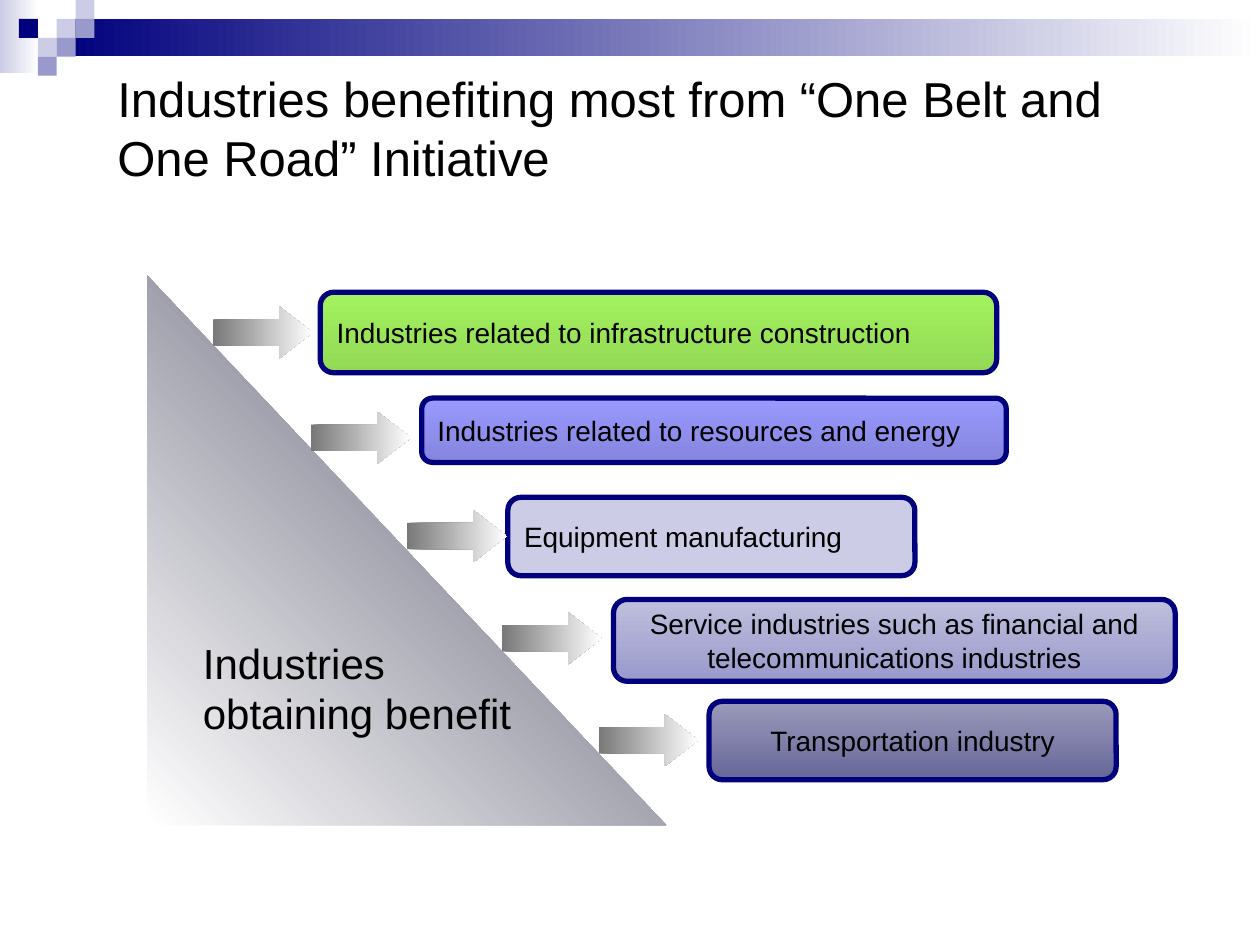
from pptx import Presentation
from pptx.dml.color import RGBColor
from pptx.enum import shapes, text
from pptx.util import Pt

COLORS = {
    "black": "000000", "white": "FFFFFF", "navy": "00007D",
    "pale": "CCCCE6", "lilac": "9999CC", "dusk": "46465F", "gray": "787878",
    "green": "A3F25F", "green_end": "92D955",
    "violet": "9999FF", "violet_end": "8585DE",
    "lavender": "BFBFDD", "slate": "9A9ABB", "slate_end": "666699",
}
SQUARE = 10.8
# column, row, colour
SQUARES = [(3, 1, "pale"), (4, 0, "pale"), (4, 1, "lilac"), (2, 2, "pale"),
           (1, 1, "navy"), (3, 2, "lilac"), (2, 3, "lilac")]

LEFT, CENTER = text.PP_ALIGN.LEFT, text.PP_ALIGN.CENTER
# lines, box, fill colours, alignment, arrow position
INDUSTRIES = [
    (["Industries related to infrastructure construction"],
     (183, 167, 386.5, 46), ("green", "green_end"), LEFT, (121.7, 175)),
    (["Industries related to resources and energy"],
     (241, 227.5, 334, 36.7), ("violet", "violet_end"), LEFT, (177.8, 235.2)),
    (["Equipment manufacturing"],
     (290.2, 284.2, 232.6, 44.8), ("pale",), LEFT, (232.6, 291.4)),
    (["Service industries such as financial and",
      "telecommunications industries"],
     (350.6, 342.5, 321, 46.8), ("lavender", "lilac"), CENTER, (286.8, 349.8)),
    (["Transportation industry"],
     (405.2, 400.8, 232.6, 44.8), ("slate", "slate_end"), CENTER, (342, 408)),
]


def rgb(name):
    return RGBColor.from_string(COLORS[name])


def add_filled(slide, kind, box, colors, angle=0):
    """Add a lineless shape with one colour, or two as a gradient."""
    shape = slide.shapes.add_shape(kind, *(Pt(value) for value in box))
    shape.shadow.inherit = False
    shape.line.fill.background()
    if len(colors) == 1:
        shape.fill.solid()
        shape.fill.fore_color.rgb = rgb(colors[0])
    else:
        shape.fill.gradient()
        shape.fill.gradient_angle = angle
        for stop, color in zip(shape.fill.gradient_stops, colors):
            stop.color.rgb = rgb(color)
    return shape


def write(shape, lines, size, align=LEFT, wrap=False):
    frame = shape.text_frame
    frame.text = "\n".join(lines)
    frame.word_wrap = wrap
    frame.auto_size = text.MSO_AUTO_SIZE.NONE
    frame.vertical_anchor = text.MSO_ANCHOR.MIDDLE
    for paragraph in frame.paragraphs:
        paragraph.alignment = align
        for run in paragraph.runs:
            run.font.name = "Arial"
            run.font.size = Pt(size)
            run.font.color.rgb = rgb("black")


def add_header(slide):
    rectangle = shapes.MSO_SHAPE.RECTANGLE
    add_filled(slide, rectangle, (0, 0, 22.3, 41.8), ("pale", "white"))
    add_filled(slide, rectangle, (3 * SQUARE, SQUARE, 687.6, 21.4),
               ("navy", "white"))
    for column, row, color in SQUARES:
        add_filled(slide, rectangle,
                   (column * SQUARE, row * SQUARE, SQUARE, SQUARE), (color,))


def set_title(slide, title):
    shape = slide.shapes.title
    shape.left, shape.top = Pt(59.8), Pt(45.4)
    shape.width, shape.height = Pt(589), Pt(54.7)
    write(shape, [title], 28, wrap=True)


def add_triangle(slide):
    triangle = add_filled(slide, shapes.MSO_SHAPE.RIGHT_TRIANGLE,
                          (84.2, 157.5, 296.5, 314), ("white", "dusk"), 45)
    write(triangle, ["Industries", "obtaining benefit"], 24)


def add_industry_box(slide, lines, box, colors, align):
    shape = add_filled(slide, shapes.MSO_SHAPE.ROUNDED_RECTANGLE,
                       box, colors, 270)
    shape.line.color.rgb = rgb("navy")
    shape.line.width = Pt(3)
    write(shape, lines, 16, align)


def add_arrow(slide, position):
    arrow = add_filled(slide, shapes.MSO_SHAPE.RIGHT_ARROW,
                       (*position, 57, 30), ("gray", "white"))
    arrow.adjustments[1] = 0.64


def main():
    presentation = Presentation()
    presentation.slide_width, presentation.slide_height = Pt(720), Pt(540)
    slide = presentation.slides.add_slide(presentation.slide_layouts[5])
    add_header(slide)
    set_title(slide, "Industries benefiting most from “One Belt and "
                     "One Road” Initiative")
    add_triangle(slide)
    for lines, box, colors, align, arrow_position in INDUSTRIES:
        add_industry_box(slide, lines, box, colors, align)
        add_arrow(slide, arrow_position)
    presentation.save("out.pptx")


if __name__ == "__main__":
    main()
